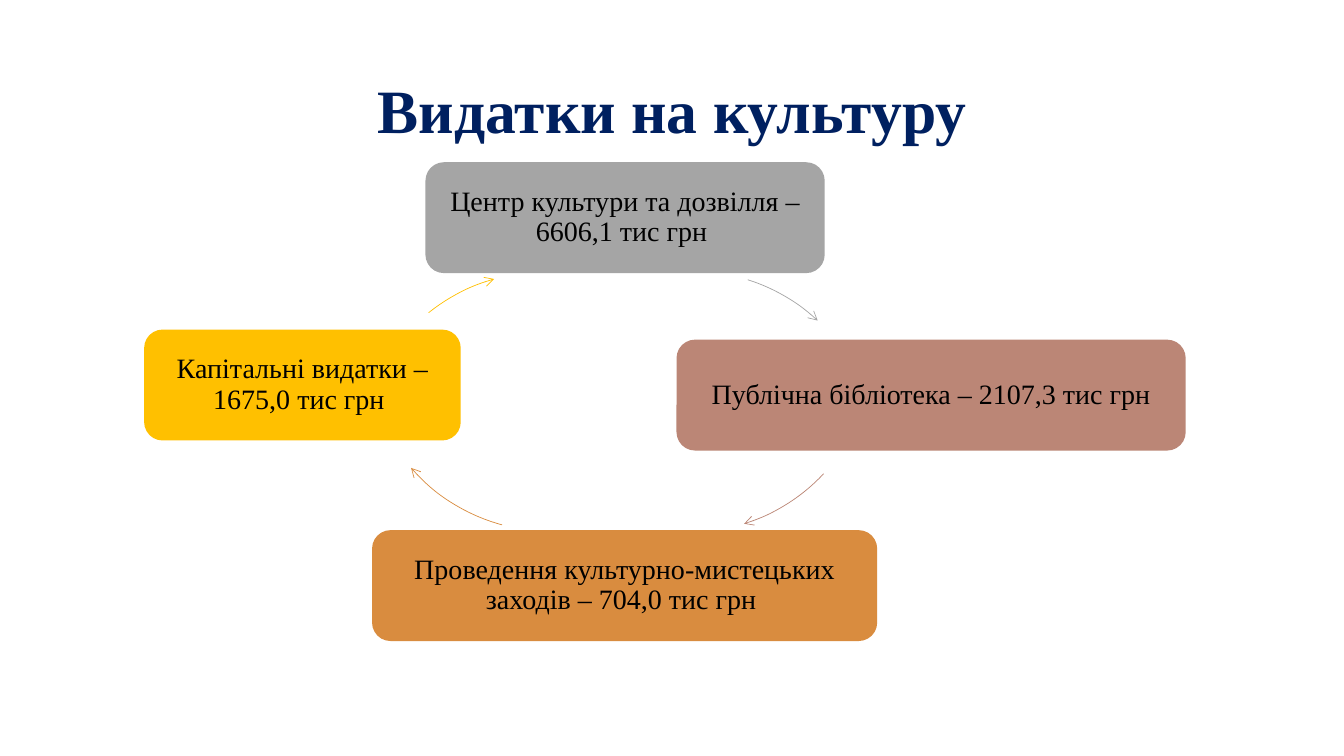
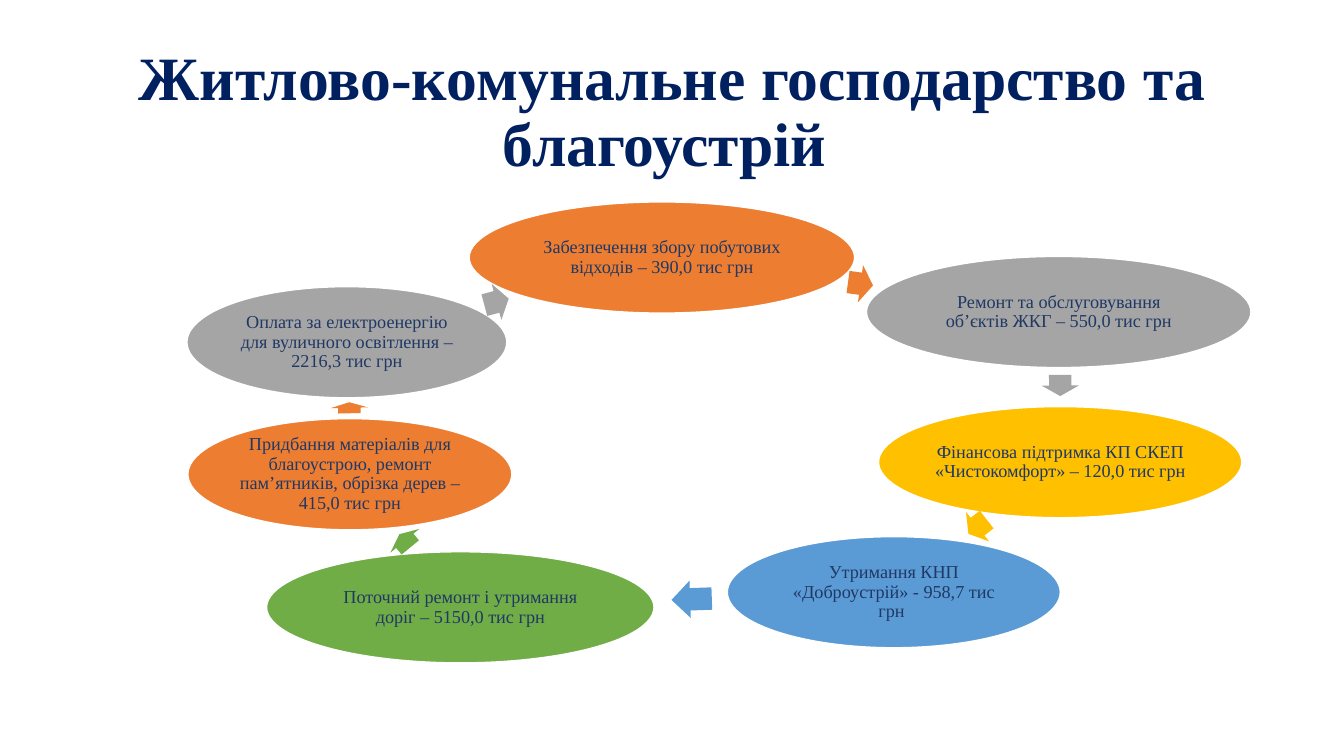
from pptx import Presentation
from pptx import util as u
from pptx.dml.color import RGBColor
from pptx.enum import shapes, text
from pptx.oxml.ns import qn
from lxml import etree

PX = 9144  # 100 px to the inch
SLIDE_W, SLIDE_H = 1333, 750
FONT = "Times New Roman"

NAVY = RGBColor(0x00, 0x20, 0x60)
SLATE = RGBColor(0x20, 0x38, 0x64)
BLACK = RGBColor(0x00, 0x00, 0x00)
WHITE = RGBColor(0xFF, 0xFF, 0xFF)
GRAY = RGBColor(0xA5, 0xA5, 0xA5)
ROSE = RGBColor(0xBB, 0x86, 0x76)
AMBER = RGBColor(0xD9, 0x8C, 0x3F)
GOLD = RGBColor(0xFF, 0xC0, 0x00)
ORANGE = RGBColor(0xED, 0x7D, 0x31)
BLUE = RGBColor(0x5B, 0x9B, 0xD5)
GREEN = RGBColor(0x70, 0xAD, 0x47)

# Culture: wording, colour, box left, top, width,
# then the arc to the next box: circle left, top, start and end degrees
CULTURE_BOX_H = 110
ARC_SIZE = 365
CULTURE = [
    ("Центр культури та дозвілля – 6606,1 тис грн ", GRAY,
     (422, 161, 396), (504, 269, 287.6, 313)),
    ("Публічна бібліотека – 2107,3 тис грн", ROSE,
     (671, 337, 505), (501, 163, 43, 72.6)),
    ("Проведення культурно-мистецьких заходів – 704,0 тис грн ", AMBER,
     (369, 526, 501), (363, 162, 105.1, 139)),
    ("Капітальні видатки – 1675,0 тис грн ", GOLD,
     (143, 327, 314), (357, 270, 231.2, 254.3)),
]

# Utilities: wording, colour, oval left, top, width,
# then the arrow to the next oval: left, top, length, rotation
OVAL_H = 111
ARROW_H = 37
UTILITIES = [
    ("Забезпечення збору побутових відходів – 390,0 тис грн", ORANGE,
     (465, 200, 383), (841, 263, 25, 7.8)),
    ("Ремонт та обслуговування об’єктів ЖКГ – 550,0 тис грн", GRAY,
     (859, 254, 382), (1041, 364, 21, 89.7)),
    ("Фінансова підтримка КП СКЕП «Чистокомфорт» – 120,0 тис грн", GOLD,
     (871, 403, 361), (958, 504, 23, 141.9)),
    ("Утримання КНП «Доброустрій» - 958,7 тис грн ", BLUE,
     (721, 532, 331), (666, 576, 40, 178)),
    ("Поточний ремонт і утримання доріг – 5150,0 тис грн", GREEN,
     (264, 547, 385), (393, 518, 17, 230.5)),
    ("Придбання матеріалів для благоустрою, ремонт пам’ятників, "
     "обрізка дерев – 415,0 тис грн", ORANGE,
     (186, 415, 322), (341, 386, 11, 268.8)),
    ("Оплата за електроенергію для вуличного освітлення – 2216,3 тис грн", GRAY,
     (185, 284, 318), (480, 281, 25, 345)),
]


def px(*lengths):
    return [u.Emu(length * PX) for length in lengths]


def write(frame, wording, size, color, inset_x, inset_y, bold=False):
    """Centre one paragraph in a text frame."""
    frame.word_wrap = True
    frame.vertical_anchor = text.MSO_ANCHOR.MIDDLE
    frame.margin_left = frame.margin_right = u.Emu(inset_x * PX)
    frame.margin_top = frame.margin_bottom = u.Emu(inset_y * PX)
    paragraph = frame.paragraphs[0]
    paragraph.text = wording
    paragraph.alignment = text.PP_ALIGN.CENTER
    paragraph.line_spacing = 0.9
    font = paragraph.runs[0].font
    font.name, font.size, font.bold = FONT, u.Pt(size), bold
    font.color.rgb = color


def add_titled_slide(deck, wording):
    slide = deck.slides.add_slide(deck.slide_layouts[6])
    title = slide.shapes.add_textbox(*px(92, 40, 1150, 145))
    write(title.text_frame, wording, 44, NAVY, 10, 5, bold=True)
    return slide


def add_filled(slide, preset, box, color):
    """Place a flat shape without an outline."""
    figure = slide.shapes.add_shape(preset, *px(*box))
    figure.shadow.inherit = False
    figure.fill.solid()
    figure.fill.fore_color.rgb = color
    figure.line.fill.background()
    return figure


def add_expense_box(slide, wording, color, left, top, width):
    box = add_filled(slide, shapes.MSO_SHAPE.ROUNDED_RECTANGLE,
                     (left, top, width, CULTURE_BOX_H), color)
    write(box.text_frame, wording, 20, BLACK, 8, 8)


def add_arc_arrow(slide, color, left, top, start, end):
    arc = slide.shapes.add_shape(shapes.MSO_SHAPE.ARC,
                                 *px(left, top, ARC_SIZE, ARC_SIZE))
    arc.shadow.inherit = False
    arc.fill.background()
    # Angles are stored in 60000ths of a degree, adjustments in 100000ths
    for index, degrees in enumerate((start, end)):
        arc.adjustments[index] = degrees * 0.6
    arc.line.color.rgb = color
    arc.line.width = u.Pt(0.5)
    outline = arc.line._get_or_add_ln()
    etree.SubElement(outline, qn("a:tailEnd"), type="arrow")


def add_expense_oval(slide, wording, color, left, top, width):
    oval = add_filled(slide, shapes.MSO_SHAPE.OVAL,
                      (left, top, width, OVAL_H), color)
    oval.line.color.rgb = WHITE
    oval.line.width = u.Pt(1.5)
    write(oval.text_frame, wording, 13, SLATE, 2, 2)


def add_block_arrow(slide, color, left, top, length, rotation):
    arrow = add_filled(slide, shapes.MSO_SHAPE.RIGHT_ARROW,
                       (left, top, length, ARROW_H), color)
    arrow.adjustments[0] = 0.6
    arrow.adjustments[1] = 0.5
    arrow.rotation = rotation


def add_cycle(slide, expenses, add_node, add_link):
    """Draw each expense followed by its link to the next one."""
    for wording, color, node, link in expenses:
        add_node(slide, wording, color, *node)
        add_link(slide, color, *link)


def main():
    deck = Presentation()
    deck.slide_width, deck.slide_height = px(SLIDE_W, SLIDE_H)

    # Culture spending
    culture = add_titled_slide(deck, "Видатки на культуру")
    add_cycle(culture, CULTURE, add_expense_box, add_arc_arrow)

    # Housing and utilities spending
    utilities = add_titled_slide(
        deck, "Житлово-комунальне господарство та благоустрій ")
    add_cycle(utilities, UTILITIES, add_expense_oval, add_block_arrow)

    deck.save("out.pptx")


if __name__ == "__main__":
    main()
